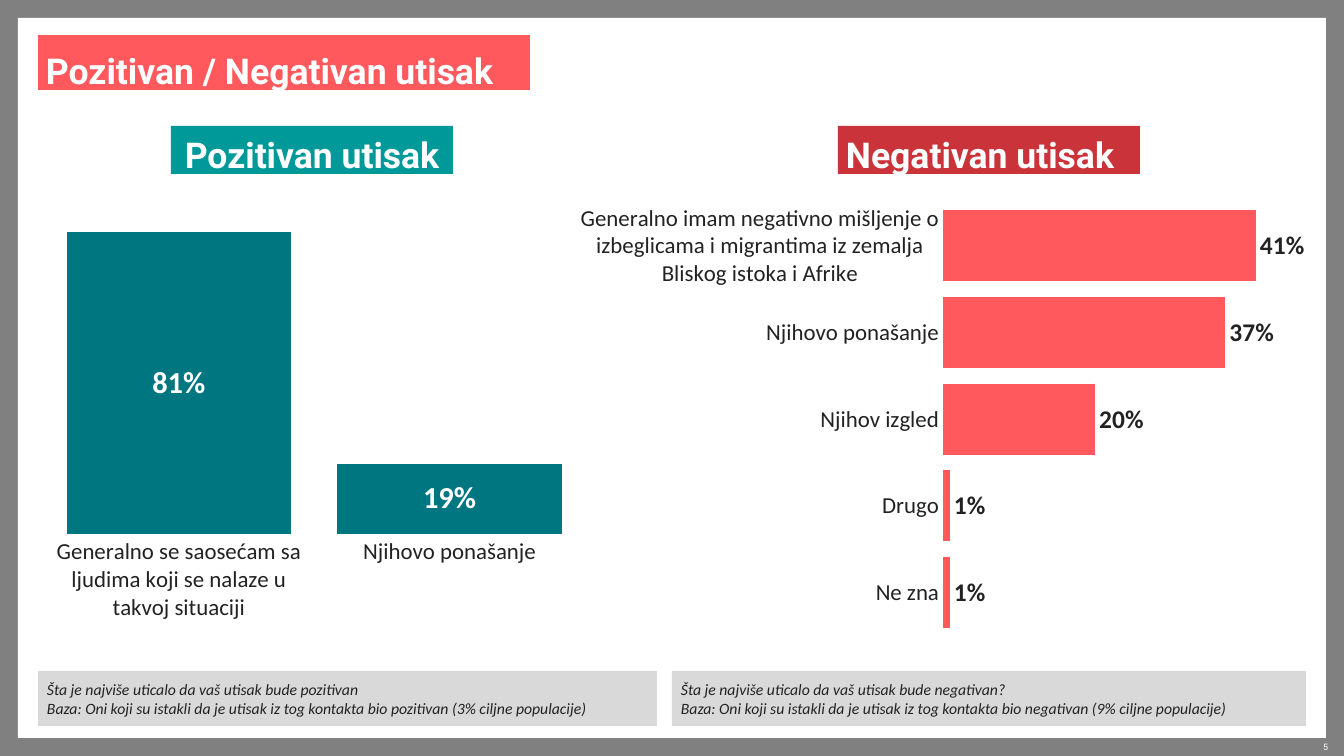
from lxml import etree
from pptx import Presentation
from pptx.chart.data import CategoryChartData
from pptx.dml.color import RGBColor
from pptx.enum.chart import XL_CHART_TYPE, XL_LABEL_POSITION, XL_TICK_LABEL_POSITION, XL_TICK_MARK
from pptx.enum.shapes import MSO_SHAPE
from pptx.enum.text import MSO_ANCHOR, MSO_AUTO_SIZE, PP_ALIGN
from pptx.oxml.ns import qn
from pptx.util import Pt

PX = 10004  # EMU per px
WHITE = RGBColor(0xFF, 0xFF, 0xFF)
GREY = RGBColor(0x80, 0x80, 0x80)
PALE = RGBColor(0xD9, 0xD9, 0xD9)
INK = RGBColor(0x22, 0x22, 0x23)
CORAL = RGBColor(0xFF, 0x58, 0x5D)
RED = RGBColor(0xCB, 0x33, 0x3B)
TEAL = RGBColor(0x00, 0x99, 0x99)
DEEP = RGBColor(0x00, 0x76, 0x81)

# Formats
HEAD = dict(name="Roboto", size=Pt(28), bold=True)
NOTE = dict(name="Calibri", size=Pt(12.4), italic=True)
PAGE = dict(name="Roboto", size=Pt(7))
AXIS = dict(name="Calibri", size=Pt(18))
LABEL = dict(name="Calibri", bold=True)

# Content: boxes are left, top, width, height in px
PANEL = (18, 18, 1308, 720)
TITLE = ("Pozitivan / Negativan utisak", (38, 35, 492, 55))
HEADS = [
    ("Pozitivan utisak", (171, 126, 282, 48), TEAL, PP_ALIGN.CENTER),
    ("Negativan utisak", (838, 126, 302, 48), RED, PP_ALIGN.LEFT),
]
NOTES = [
    (["Šta je najviše uticalo da vaš utisak bude pozitivan",
      "Baza: Oni koji su istakli da je utisak iz tog kontakta bio pozitivan (3% ciljne populacije)"],
     (38, 671, 619, 55)),
    (["Šta je najviše uticalo da vaš utisak bude negativan?",
      "Baza: Oni koji su istakli da je utisak iz tog kontakta bio negativan (9% ciljne populacije)"],
     (672, 671, 634, 55)),
]
NUMBER = ("5", (1255, 741, 73, 12))
CHARTS = [
    dict(kind=XL_CHART_TYPE.COLUMN_STACKED, box=(38, 198, 547, 437),
         plot=(0.01, 0, 0.99, 0.77), top=90, fill=DEEP, ink=WHITE, size=24,
         spot=XL_LABEL_POSITION.CENTER, flip=False,
         data={"Generalno se saosećam sa ljudima koji se nalaze u takvoj situaciji": 81,
               "Njihovo ponašanje": 19}),
    dict(kind=XL_CHART_TYPE.BAR_CLUSTERED, box=(549, 198, 757, 438),
         plot=(0.52, 0.01, 0.46, 0.99), top=45.5, fill=CORAL, ink=INK, size=20,
         spot=XL_LABEL_POSITION.OUTSIDE_END, flip=True,
         data={"Generalno imam negativno mišljenje o izbeglicama i migrantima "
               "iz zemalja Bliskog istoka i Afrike": 41,
               "Njihovo ponašanje": 37, "Njihov izgled": 20, "Drugo": 1, "Ne zna": 1}),
]


def emu(box):
    return [v * PX for v in box]


def style(font, look, color):
    for key, val in look.items():
        setattr(font, key, val)
    font.color.rgb = color


def paint(shape, color):
    shape.fill.solid()
    shape.fill.fore_color.rgb = color
    shape.line.fill.background()


def write(shape, lines, look, color, align=PP_ALIGN.LEFT, pad=(8, 0), lead=None):
    frame = shape.text_frame
    side, top = pad
    form = dict(word_wrap=True, auto_size=MSO_AUTO_SIZE.NONE,
                vertical_anchor=MSO_ANCHOR.MIDDLE, margin_left=side * PX,
                margin_right=side * PX, margin_top=top * PX, margin_bottom=0)
    for key, val in form.items():
        setattr(frame, key, val)
    frame.text = "\n".join(lines)
    for para in frame.paragraphs:
        para.alignment = align
        para.space_before = Pt(0)
        if lead:
            para.line_spacing = lead
        style(para.runs[0].font, look, color)


def block(slide, box, color):
    shape = slide.shapes.add_shape(MSO_SHAPE.RECTANGLE, *emu(box))
    shape.shadow.inherit = False
    paint(shape, color)
    return shape


def place(chart, plot):
    area = chart._chartSpace.chart.plotArea
    for old in area.findall(qn("c:layout")):
        area.remove(old)
    layout = etree.Element(qn("c:layout"))
    area.insert(0, layout)
    manual = etree.SubElement(layout, qn("c:manualLayout"))
    rules = [("layoutTarget", "inner"), ("xMode", "edge"), ("yMode", "edge")]
    for tag, val in rules + list(zip("xywh", plot)):
        etree.SubElement(manual, qn("c:" + tag)).set("val", str(val))


def graph(slide, item):
    data = CategoryChartData()
    data.categories = list(item["data"])
    data.add_series("Series 1", list(item["data"].values()))
    chart = slide.shapes.add_chart(item["kind"], *emu(item["box"]), data).chart
    chart.has_legend = chart.has_title = False
    style(chart.font, AXIS, INK)
    place(chart, item["plot"])

    # Axes
    cats, vals = chart.category_axis, chart.value_axis
    for axis in (cats, vals):
        axis.has_major_gridlines = False
        axis.major_tick_mark = XL_TICK_MARK.NONE
        axis.format.line.fill.background()
    style(cats.tick_labels.font, AXIS, INK)
    cats.reverse_order = item["flip"]
    vals.tick_label_position = XL_TICK_LABEL_POSITION.NONE
    vals.minimum_scale, vals.maximum_scale = 0, item["top"]

    # Bars and their labels
    plot = chart.plots[0]
    plot.gap_width = 20
    plot.vary_by_categories = False
    form = plot.series[0].format
    form.fill.solid()
    form.fill.fore_color.rgb = item["fill"]
    form.line.color.rgb = WHITE
    form.line.width = Pt(0.75)
    labels = plot.series[0].data_labels
    look = dict(show_value=True, number_format='#"%"',
                number_format_is_linked=False, position=item["spot"])
    for key, val in look.items():
        setattr(labels, key, val)
    style(labels.font, dict(LABEL, size=Pt(item["size"])), item["ink"])


def main():
    deck = Presentation()
    deck.slide_width, deck.slide_height = emu((1344, 756))
    slide = deck.slides.add_slide(deck.slide_layouts[5])

    # Frame and page number
    slide.background.fill.solid()
    slide.background.fill.fore_color.rgb = GREY
    panel = block(slide, PANEL, WHITE)
    title = slide.shapes.title
    panel._element.addnext(title._element)
    text, box = NUMBER
    page = slide.shapes.add_textbox(*emu(box))
    write(page, [text], PAGE, WHITE, PP_ALIGN.RIGHT, (0, 0))

    # Title
    text, box = TITLE
    title.left, title.top, title.width, title.height = emu(box)
    paint(title, CORAL)
    write(title, [text], HEAD, WHITE, pad=(8, 7), lead=Pt(41))

    # Charts, headings and notes
    for item in CHARTS:
        graph(slide, item)
    for text, box, color, align in HEADS:
        write(block(slide, box, color), [text], HEAD, WHITE, align, lead=Pt(41))
    for lines, box in NOTES:
        write(block(slide, box, PALE), lines, NOTE, INK, pad=(9, 0))

    deck.save("out.pptx")


if __name__ == "__main__":
    main()
